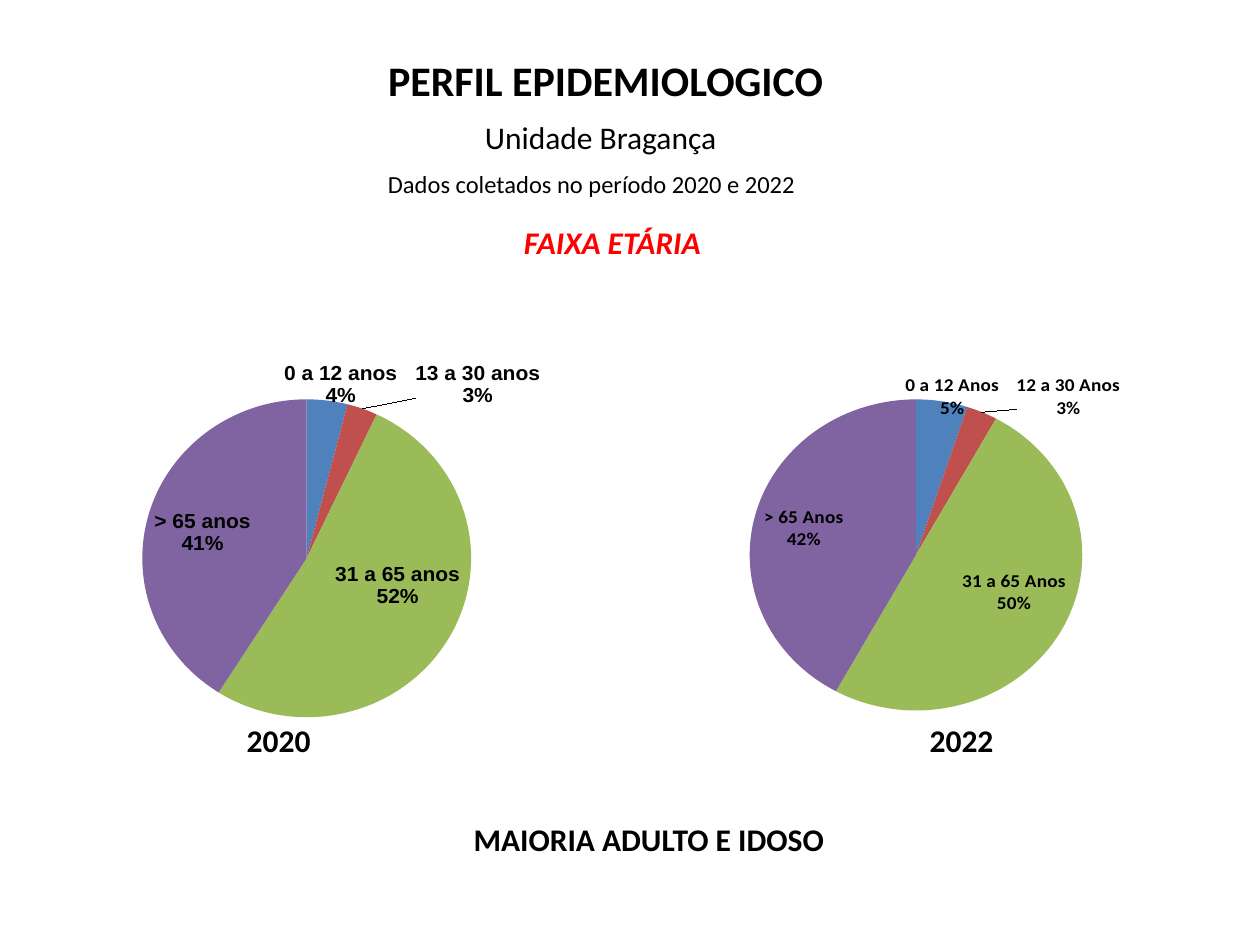
from collections import namedtuple
from lxml.etree import SubElement
from pptx import Presentation
from pptx.chart.data import CategoryChartData
from pptx.dml.color import RGBColor
from pptx.enum.chart import XL_CHART_TYPE
from pptx.enum.text import MSO_ANCHOR, MSO_AUTO_SIZE, PP_ALIGN
from pptx.oxml.ns import qn
from pptx.util import Inches, Pt

Box = namedtuple("Box", "x y w h")
Theme = namedtuple("Theme", "font alt ink red pie big mid small tick")
THEME = Theme("Calibri", "Arial", "000000", "FF0000",
              ("4F81BD", "C0504D", "9BBB59", "8064A2"), 24, 18, 14, 10)
COLS, ROWS = 100, 75
UNIT = Inches(10) // COLS


def place(box):
    """Turn grid columns and rows into slide lengths."""
    return [round(v * UNIT) for v in box]


def inner(box, x, y, w, h):
    """Return a box offset from the corner of another."""
    return Box(box.x + x, box.y + y, w, h)


def style(font, size, face=THEME.font, color=THEME.ink, bold=False, italic=False):
    """Format a font."""
    font.size, font.name = Pt(size), face
    font.bold, font.italic = bold, italic
    font.color.rgb = RGBColor.from_string(color)


def write(slide, text, box, size=THEME.mid, shape=None, **form):
    """Write one line of text in a new box or a given placeholder."""
    if shape is None:
        shape = slide.shapes.add_textbox(*place(box))
    shape.left, shape.top, shape.width, shape.height = place(box)
    frame = shape.text_frame
    frame.text = text
    frame.word_wrap = False
    frame.auto_size = MSO_AUTO_SIZE.NONE
    frame.vertical_anchor = MSO_ANCHOR.TOP
    line = frame.paragraphs[0]
    line.alignment = PP_ALIGN.LEFT
    style(line.runs[0].font, size, **form)


def node(parent, tag, **attrs):
    """Add a chart element to its parent."""
    return SubElement(parent, qn(f"c:{tag}"), attrs)


def layout(parent, *, target=None, **vals):
    """Add a manual layout to a chart part."""
    manual = node(node(parent, "layout"), "manualLayout")
    if target:
        node(manual, "layoutTarget", val=target)
        for axis in "xy":
            node(manual, f"{axis}Mode", val="edge")
    for key, val in vals.items():
        node(manual, key, val=str(val))


def shift(labels, moves):
    """Move each slice label by a share of the chart size."""
    for i, (x, y) in enumerate(moves):
        item = node(labels, "dLbl", idx="0")
        item.attrib.clear()
        node(item, "idx", val=str(i))
        layout(item, x=x, y=y)
        node(item, "dLblPos", val="outEnd" if i < 2 else "ctr")
        for flag in ("LegendKey", "Val", "CatName", "SerName", "Percent", "BubbleSize"):
            node(item, f"show{flag}", val=str(int(flag in ("CatName", "Percent"))))
        node(item, "separator").text = "\n"
        labels.insert(i, item)


def panel(slide, box, year, left, names, vals, area, moves, size, face):
    """Draw one pie with its year beneath."""
    data = CategoryChartData()
    data.categories = names
    data.add_series("Series 1", vals)
    chart = slide.shapes.add_chart(XL_CHART_TYPE.PIE, *place(box), data).chart
    chart.has_legend = chart.has_title = False
    style(chart.font, THEME.tick)
    plot = chart.plots[0]
    plot.vary_by_categories = True
    series = plot.series[0]
    for i, color in enumerate(THEME.pie):
        fill = series.points[i].format.fill
        fill.solid()
        fill.fore_color.rgb = RGBColor.from_string(color)
    labels = series.data_labels
    style(labels.font, size, face, bold=True)
    labels.show_category_name = labels.show_percentage = True
    labels.show_value = False
    shift(labels._element, moves)
    root = chart._chartSpace.chart.plotArea
    for old in root.findall(qn("c:layout")):
        root.remove(old)
    layout(root, target="inner", **dict(zip("xywh", area)))
    root.insert(0, root[-1])
    write(slide, year, inner(box, left, 28.9, 7.1, 4), bold=True)


def head(slide, box):
    """Place the title and the lines under it."""
    write(slide, "PERFIL EPIDEMIOLOGICO", inner(box, 0, 0, 36.9, 5),
          THEME.big, slide.shapes.title, bold=True)
    write(slide, "Unidade Bragança", inner(box, 7.7, 5.1, 20.6, 4))
    write(slide, "Dados coletados no período 2020 e 2022",
          inner(box, 0, 9.1, 35.1, 3.4), THEME.small)
    write(slide, "FAIXA ETÁRIA", inner(box, 10.8, 13.4, 16.3, 4),
          color=THEME.red, bold=True, italic=True)


def main():
    """Build and save the slide."""
    deck = Presentation()
    deck.slide_width, deck.slide_height = COLS * UNIT, ROWS * UNIT
    slide = deck.slides.add_slide(deck.slide_layouts[5])
    head(slide, Box(29.8, 3.8, 36.9, 17.4))
    panel(slide, Box(-2.9, 27.8, 50, 30), "2020", 21.5,
          ("0 a 12 anos", "13 a 30 anos", "31 a 65 anos", "> 65 anos"),
          (4, 3, 52, 41), (0.09, 0.1, 0.91, 0.87),
          ((-0.07, 0.01), (0.08, -0.01), (0.03, -0.03), (-0.04, -0.01)),
          12, THEME.alt)
    panel(slide, Box(48.7, 27.8, 50, 30), "2022", 24.1,
          ("0 a 12 Anos", "12 a 30 Anos", "31 a 65 Anos", "> 65 Anos"),
          (5, 3, 50, 42), (0.02, 0.07, 0.92, 0.88),
          ((-0.06, 0.04), (0.05, 0.01), (0.04, 0), (-0.05, -0.02)),
          11, THEME.font)
    write(slide, "MAIORIA ADULTO E IDOSO", Box(36.6, 64.6, 30.1, 4), bold=True)
    deck.save("out.pptx")


if __name__ == "__main__":
    main()
